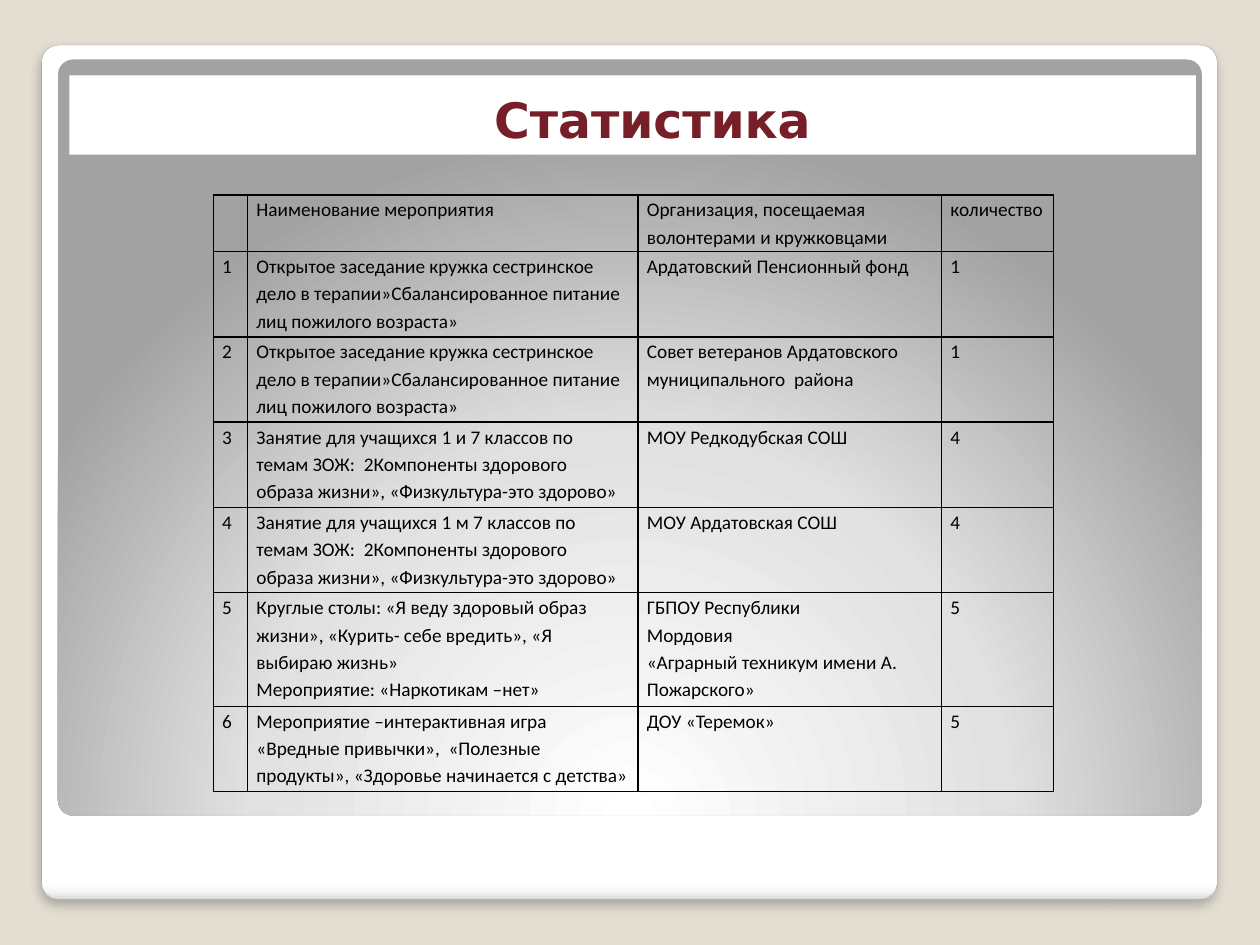
from lxml import etree
from pptx import Presentation
from pptx.dml.color import RGBColor
from pptx.enum import shapes, text
from pptx.oxml import parse_xml
from pptx.oxml.ns import qn
from pptx.util import Cm, Pt

HUES = {
    "back": "E3DED1", "white": "FFFFFF", "mist": "F7F7F7", "pale": "DADADA",
    "light": "E1E1E1", "gray": "A2A2A2", "edge": "A4A4A4",
    "wine": "771F28", "black": "000000",
}
NS = 'xmlns:a="http://schemas.openxmlformats.org/drawingml/2006/main"'
PLAIN = "{2D5ABB26-0587-4C30-8999-92F81FD0307C}"

DOWN = '<a:lin ang="5400000" scaled="0"/>'
GLOW = ('<a:path path="circle"><a:fillToRect l="50000" t="175000" '
        'r="50000" b="-75000"/></a:path>')

DIET = ("Открытое заседание кружка сестринское дело в терапии»"
        "Сбалансированное питание лиц пожилого возраста»")
SPORT = ("Занятие для учащихся 1 {} 7 классов по темам ЗОЖ:  2Компоненты "
         "здорового образа жизни», «Физкультура-это здорово»")
HEAD = ("", "Наименование мероприятия",
        "Организация, посещаемая волонтерами и кружковцами", "количество")
EVENTS = [
    (DIET, "Ардатовский Пенсионный фонд", 1),
    (DIET, "Совет ветеранов Ардатовского муниципального  района", 1),
    (SPORT.format("и"), "МОУ Редкодубская СОШ", 4),
    (SPORT.format("м"), "МОУ Ардатовская СОШ", 4),
    ("Круглые столы: «Я веду здоровый образ жизни», «Курить- себе вредить», "
     "«Я выбираю жизнь»\nМероприятие: «Наркотикам –нет»",
     "ГБПОУ Республики\nМордовия\n«Аграрный техникум имени А. Пожарского»", 5),
    ("Мероприятие –интерактивная игра «Вредные привычки»,  «Полезные "
     "продукты», «Здоровье начинается с детства»", "ДОУ «Теремок»", 5),
]


def tint(name):
    return RGBColor.from_string(HUES[name])


class Deck:
    def __init__(self):
        self.prs = Presentation()
        self.prs.slide_width, self.prs.slide_height = Cm(25.4), Cm(19.05)
        self.slide = self.prs.slides.add_slide(self.prs.slide_layouts[5])
        fill = self.slide.background.fill
        fill.solid()
        fill.fore_color.rgb = tint("back")

    def style(self, par, font, size, hue, bold=False):
        for run in par.runs:
            run.font.name, run.font.size = font, Pt(size)
            run.font.bold, run.font.color.rgb = bold, tint(hue)

    def panel(self, box, stops, shade, edge=None):
        """Rounded panel with a gradient, placed behind the title."""
        item = self.slide.shapes.add_shape(
            shapes.MSO_SHAPE.ROUNDED_RECTANGLE, *map(Cm, box))
        item.adjustments[0] = 0.02
        item.shadow.inherit = False
        if edge:
            item.line.color.rgb = tint(edge)
            item.line.width = Pt(0.16)
        else:
            item.line.fill.background()
        marks = "".join(
            f'<a:gs pos="{pos * 1000}"><a:srgbClr val="{HUES[hue]}"/></a:gs>'
            for pos, hue in stops)
        grad = parse_xml(f'<a:gradFill {NS} rotWithShape="1"><a:gsLst>{marks}'
                         f'</a:gsLst>{shade}</a:gradFill>')
        item._element.spPr.find(qn("a:prstGeom")).addnext(grad)
        title = self.slide.shapes.title._element
        title.addprevious(item._element)
        return item

    def shadow(self, item):
        fx = item._element.spPr.find(qn("a:effectLst"))
        fx.append(parse_xml(
            f'<a:outerShdw {NS} blurRad="{Pt(6)}" dist="{Pt(4)}" dir="5400000" '
            f'algn="t" rotWithShape="0"><a:srgbClr val="{HUES["black"]}">'
            '<a:alpha val="25000"/></a:srgbClr></a:outerShdw>'))

    def title(self, words, box):
        item = self.slide.shapes.title
        item.left, item.top, item.width, item.height = map(Cm, box)
        item.fill.solid()
        item.fill.fore_color.rgb = tint("white")
        frame = item.text_frame
        frame.text = words
        frame.vertical_anchor = text.MSO_ANCHOR.BOTTOM
        frame.margin_left = Cm(1.05)
        par = frame.paragraphs[0]
        par.alignment = text.PP_ALIGN.CENTER
        self.style(par, "DejaVu Sans", 27.9, "wine", True)

    def border(self, cell):
        props = cell._tc.get_or_add_tcPr()
        for spot, side in enumerate(("lnL", "lnR", "lnT", "lnB")):
            line = parse_xml(
                f'<a:{side} {NS} w="{Pt(1)}"><a:solidFill>'
                f'<a:srgbClr val="{HUES["black"]}"/></a:solidFill></a:{side}>')
            props.insert(spot, line)

    def table(self, rows, left, top, wide, high):
        grid = self.slide.shapes.add_table(
            len(rows), len(wide), Cm(left), Cm(top),
            Cm(sum(wide)), Cm(sum(high))).table
        grid.first_row = grid.horz_banding = False
        grid._tbl.tblPr.find(qn("a:tableStyleId")).text = PLAIN
        for col, size in zip(grid.columns, wide):
            col.width = Cm(size)
        for line, size, row in zip(grid.rows, high, rows):
            line.height = Cm(size)
            for cell, words in zip(line.cells, row):
                cell.text_frame.text = str(words)
                cell.margin_left = cell.margin_right = Cm(0.18)
                cell.margin_top = cell.margin_bottom = 0
                cell.fill.background()
                self.border(cell)
                for par in cell.text_frame.paragraphs:
                    par.line_spacing = 1.15
                    self.style(par, "Calibri", 11, "black")


def main():
    deck = Deck()
    # Frame and inner panel
    frame = deck.panel(
        (0.84, 0.91, 23.7, 17.22),
        [(0, "white"), (98, "white"), (99, "mist"), (100, "pale")],
        DOWN, "edge")
    deck.shadow(frame)
    deck.panel((1.17, 1.2, 23.06, 15.24),
               [(0, "white"), (55, "light"), (100, "gray")], GLOW)
    # Title
    deck.title("Статистика", (1.4, 1.52, 22.71, 1.6))
    # Table of events
    rows = [HEAD] + [(num, *event) for num, event in enumerate(EVENTS, 1)]
    deck.table(rows, 4.3, 3.93, (0.69, 7.87, 6.12, 2.26),
               [1.14] + [1.72] * 4 + [2.29, 1.72])
    deck.prs.save("out.pptx")


if __name__ == "__main__":
    main()
